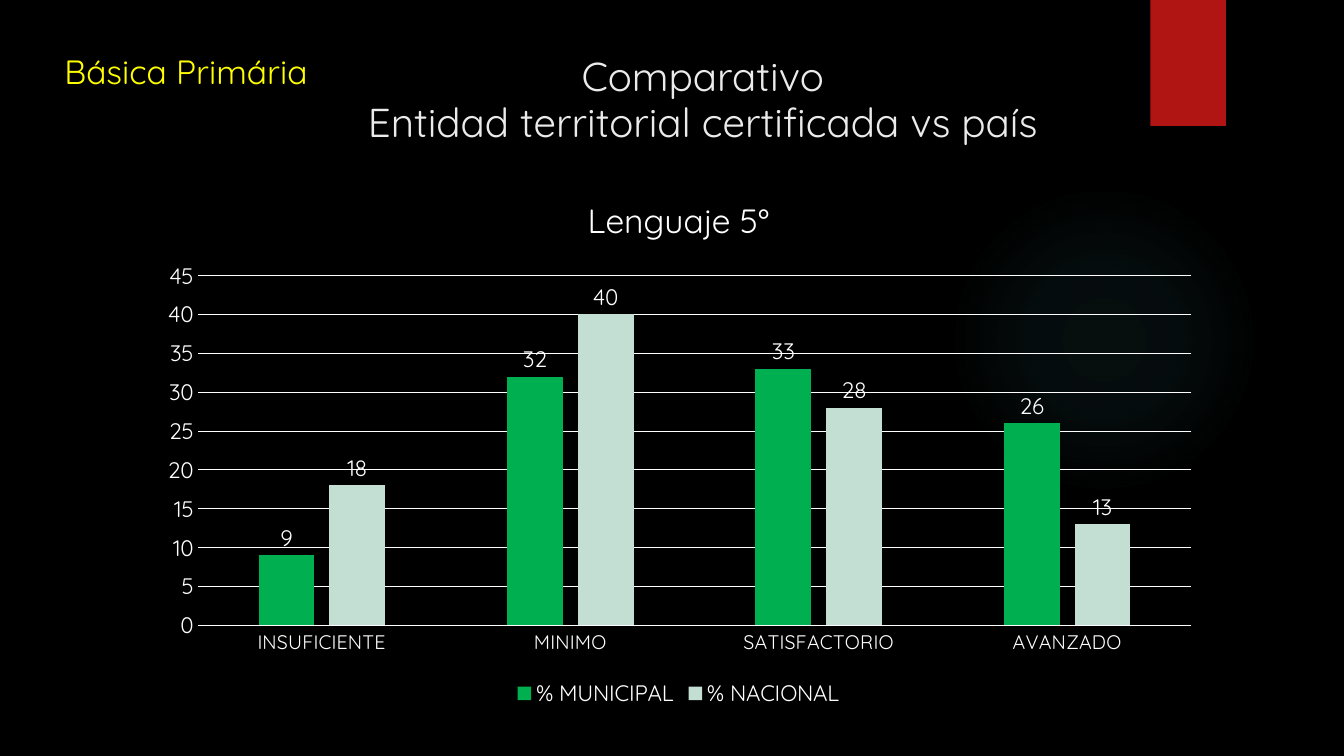
from lxml import etree
from pptx import Presentation
from pptx.chart.data import CategoryChartData
from pptx.dml.color import RGBColor
from pptx.enum.chart import XL_CHART_TYPE as ChartType
from pptx.enum.chart import XL_LABEL_POSITION as LabelPosition
from pptx.enum.chart import XL_LEGEND_POSITION as LegendPosition
from pptx.enum.chart import XL_TICK_MARK as TickMark
from pptx.enum.shapes import MSO_SHAPE as Preset
from pptx.enum.text import MSO_ANCHOR as Anchor
from pptx.enum.text import PP_ALIGN as Align
from pptx.oxml import parse_xml
from pptx.oxml.ns import nsdecls, qn
from pptx.util import Inches, Pt

FONT = "Quicksand"
BLACK = RGBColor(0x00, 0x00, 0x00)
WHITE = RGBColor(0xFF, 0xFF, 0xFF)
PALE = RGBColor(0xEB, 0xEB, 0xEB)
YELLOW = RGBColor(0xFF, 0xFF, 0x00)
RED = RGBColor(0xB0, 0x15, 0x13)
TEAL = RGBColor(0x50, 0xB9, 0xC1)
GREEN = RGBColor(0x00, 0xB0, 0x50)
MINT = RGBColor(0xC3, 0xDE, 0xD3)

GLOW_STOPS = [(0, 7), (36, 6), (69, 0), (100, 0)]
LEVELS = ["INSUFICIENTE", "MINIMO", "SATISFACTORIO", "AVANZADO"]
RESULTS = [
    ("% MUNICIPAL", [9, 32, 33, 26], GREEN),
    ("% NACIONAL", [18, 40, 28, 13], MINT),
]
PLOT_AREA = {"x": 0.05, "y": 0.19, "w": 0.93, "h": 0.65}


def set_font(font, size, color=WHITE):
    font.name = FONT
    font.size = Pt(size)
    font.bold = False
    font.color.rgb = color


def place(shape, left, top, width, height):
    shape.left, shape.top = Inches(left), Inches(top)
    shape.width, shape.height = Inches(width), Inches(height)


def write_text(shape, text, size, color, align=Align.LEFT, spacing=None):
    frame = shape.text_frame
    frame.word_wrap = True
    frame.vertical_anchor = Anchor.TOP
    paragraph = frame.paragraphs[0]
    paragraph.text = text
    paragraph.alignment = align
    paragraph.line_spacing = spacing
    for run in paragraph.runs:
        set_font(run.font, size, color)


def add_plain_shape(slide, preset, left, top, width, height, color):
    shape = slide.shapes.add_shape(
        preset, Inches(left), Inches(top), Inches(width), Inches(height))
    shape.shadow.inherit = False
    shape.fill.solid()
    shape.fill.fore_color.rgb = color
    shape.line.fill.background()
    return shape


def add_glow(slide):
    shape = add_plain_shape(slide, Preset.OVAL, 9.41, 1.83, 3.08, 3.08, TEAL)
    stops = "".join(
        f'<a:gs pos="{position * 1000}"><a:srgbClr val="{TEAL}">'
        f'<a:alpha val="{alpha * 1000}"/></a:srgbClr></a:gs>'
        for position, alpha in GLOW_STOPS)
    gradient = parse_xml(
        f'<a:gradFill {nsdecls("a")}><a:gsLst>{stops}</a:gsLst>'
        '<a:path path="circle"><a:fillToRect l="50000" t="50000" '
        'r="50000" b="50000"/></a:path></a:gradFill>')
    properties = shape._element.spPr
    properties.replace(properties.find(qn("a:solidFill")), gradient)


def fix_plot_area(chart):
    plot_area = chart._chartSpace.chart.plotArea
    layout = plot_area.find(qn("c:layout"))
    if layout is None:
        layout = etree.Element(qn("c:layout"))
        plot_area.insert(0, layout)
    manual = etree.SubElement(layout, qn("c:manualLayout"))
    settings = {"layoutTarget": "inner", "xMode": "edge", "yMode": "edge", **PLOT_AREA}
    for name, value in settings.items():
        etree.SubElement(manual, qn(f"c:{name}")).set("val", str(value))


def format_axis(axis, size):
    axis.major_tick_mark = axis.minor_tick_mark = TickMark.NONE
    set_font(axis.tick_labels.font, size)


def format_line(line):
    line.color.rgb = WHITE
    line.width = Pt(0.75)


def format_series(series, color):
    series.format.fill.solid()
    series.format.fill.fore_color.rgb = color
    series.invert_if_negative = False
    labels = series.data_labels
    labels.show_value = True
    labels.position = LabelPosition.OUTSIDE_END
    set_font(labels.font, 16)


def add_results_chart(slide):
    data = CategoryChartData()
    data.categories = LEVELS
    for name, values, _ in RESULTS:
        data.add_series(name, values)
    chart = slide.shapes.add_chart(
        ChartType.COLUMN_CLUSTERED, Inches(1.43), Inches(1.72),
        Inches(10.6), Inches(5.34), data).chart
    set_font(chart.font, 10)

    chart.has_title = True
    title = chart.chart_title.text_frame.paragraphs[0]
    title.text = "Lenguaje 5°"
    set_font(title.runs[0].font, 24)
    chart.chart_title.include_in_layout = False

    chart.has_legend = True
    chart.legend.position = LegendPosition.BOTTOM
    chart.legend.include_in_layout = False
    set_font(chart.legend.font, 16)

    format_axis(chart.category_axis, 14)
    format_line(chart.category_axis.format.line)
    value_axis = chart.value_axis
    format_axis(value_axis, 16)
    value_axis.format.line.fill.background()
    value_axis.minimum_scale, value_axis.maximum_scale = 0, 45
    value_axis.major_unit = 5
    format_line(value_axis.major_gridlines.format.line)

    plot = chart.plots[0]
    plot.vary_by_categories = False
    plot.gap_width, plot.overlap = 219, -27
    for series, (_, _, color) in zip(plot.series, RESULTS):
        format_series(series, color)
    fix_plot_area(chart)


def main():
    presentation = Presentation()
    presentation.slide_width = Inches(13.33)
    presentation.slide_height = Inches(7.5)
    slide = presentation.slides.add_slide(presentation.slide_layouts[5])
    slide.background.fill.solid()
    slide.background.fill.fore_color.rgb = BLACK

    add_glow(slide)
    add_plain_shape(slide, Preset.RECTANGLE, 11.41, 0, 0.75, 1.25, RED)
    add_results_chart(slide)

    title = slide.shapes.title
    place(title, 2.94, 0.49, 8.06, 0.93)
    write_text(title, "Comparativo\vEntidad territorial certificada vs país",
               28.8, PALE, align=Align.CENTER, spacing=0.95)

    stage = slide.shapes.add_textbox(
        Inches(0.54), Inches(0.46), Inches(2.68), Inches(0.5))
    write_text(stage, "Básica Primária", 24, YELLOW)

    presentation.save("out.pptx")


if __name__ == "__main__":
    main()
